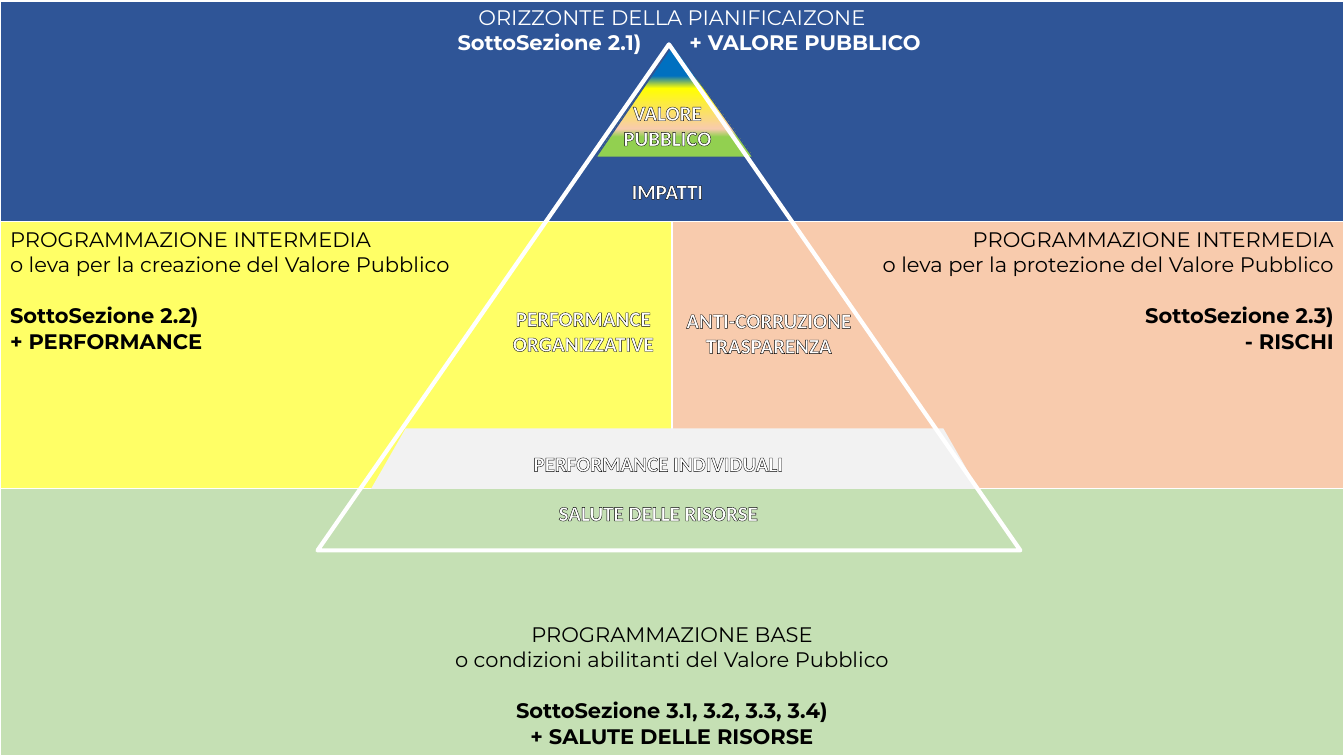
import pptx
import pptx.util
import pptx.dml.color
import pptx.enum.shapes
import pptx.enum.text
import pptx.oxml
import pptx.oxml.ns

Inches, Pt = pptx.util.Inches, pptx.util.Pt
RGB = pptx.dml.color.RGBColor.from_string
SHAPE = pptx.enum.shapes.MSO_SHAPE
ALIGN = pptx.enum.text.PP_ALIGN
NS = pptx.oxml.ns.nsdecls("a")

THEME = {
    "size": Pt(15), "table_font": "Montserrat", "label_font": "Calibri",
    "white": "FFFFFF", "black": "000000", "edge": "325491", "grey": "F2F2F2",
    "horizon": "2F5597", "performance": "FFFF66", "risks": "F8CBAD", "base": "C5E0B4",
    "tip": [(28, "0070C0"), (39, "FFFF00"), (75, "F8CBAD"), (82, "92D050")],
}
BLANK_LINE = Pt(18.3)


def add_run(p, text, font, color, bold):
    r = p.add_run()
    r.text = text
    for name, value in {"name": font, "size": THEME["size"], "bold": bold}.items():
        setattr(r.font, name, value)
    r.font.color.rgb = RGB(THEME[color])
    return r


def add_outline(kind, box, adjust, line=None, width=0):
    sp = s.shapes.add_shape(kind, *map(Inches, box))
    sp.shadow.inherit = False
    sp.adjustments[0] = adjust
    sp.fill.background()
    if line:
        sp.line.color.rgb = RGB(THEME[line])
        sp.line.width = Pt(width)
    else:
        sp.line.fill.background()
    return sp


prs = pptx.Presentation()
prs.slide_width, prs.slide_height = Inches(13.33), Inches(7.5)
s = prs.slides.add_slide(prs.slide_layouts[6])

# Background table: horizon, two levers, base
table = s.shapes.add_table(3, 2, 0, 0, prs.slide_width, prs.slide_height).table
table.first_row = table.horz_banding = False
for row, height in zip(table.rows, (2.2, 2.65, 2.65)):
    row.height = Inches(height)
for i in (0, 2):
    table.cell(i, 0).merge(table.cell(i, 1))

for i in range(3):
    for j in range(2):
        tcPr = table.cell(i, j)._tc.get_or_add_tcPr()
        for side in "LRTB":
            width = Pt(3 if (i, side) == (0, "T") else 1)
            tcPr.append(pptx.oxml.parse_xml(
                f'<a:ln{side} {NS} w="{width}"><a:solidFill>'
                f'<a:srgbClr val="{THEME["white"]}"/></a:solidFill></a:ln{side}>'))

# Each cell: row, column, fill, text colour, alignment, top margin, plain lines, bold lines
cells = [
    (0, 0, "horizon", "white", ALIGN.CENTER, 0.05,
     ["ORIZZONTE DELLA PIANIFICAIZONE"], []),
    (1, 0, "performance", "black", ALIGN.LEFT, 0.05,
     ["PROGRAMMAZIONE INTERMEDIA", "o leva per la creazione del Valore Pubblico"],
     ["SottoSezione 2.2)", "+ PERFORMANCE"]),
    (1, 1, "risks", "black", ALIGN.RIGHT, 0.05,
     ["PROGRAMMAZIONE INTERMEDIA", "o leva per la protezione del Valore Pubblico"],
     ["SottoSezione 2.3)", "- RISCHI"]),
    (2, 0, "base", "black", ALIGN.CENTER, 1.32,
     ["PROGRAMMAZIONE BASE", "o condizioni abilitanti del Valore Pubblico"],
     ["SottoSezione 3.1, 3.2, 3.3, 3.4)", "+ SALUTE DELLE RISORSE"]),
]
for i, j, fill, color, align, top, plain, bold in cells:
    cell = table.cell(i, j)
    cell.fill.solid()
    cell.fill.fore_color.rgb = RGB(THEME[fill])
    cell.margin_top = Inches(top)
    tf = cell.text_frame
    for n, text in enumerate(plain + bold):
        p = tf.add_paragraph() if n else tf.paragraphs[0]
        p.alignment = align
        if n == len(plain):
            p.space_before = BLANK_LINE
        add_run(p, text, THEME["table_font"], color, n >= len(plain))

# Heading split around the apex by one widely spaced blank
p = table.cell(0, 0).text_frame.add_paragraph()
p.alignment = ALIGN.CENTER
p._p.get_or_add_pPr().set("marL", str(Inches(0.34)))
for text, spacing in (("SottoSezione 2.1)", 0), (" ", 30), ("+ VALORE PUBBLICO", 0)):
    r = add_run(p, text, THEME["table_font"], "white", True)
    r._r.get_or_add_rPr().set("spc", str(spacing * 100))

# Pyramid: coloured tip, grey band, white outline
tip = add_outline(SHAPE.ISOSCELES_TRIANGLE, (5.91, 0.44, 1.56, 1.12), 0.49, "edge", 1)
tip.fill.gradient()
tip.fill.gradient_angle = 270
stops = tip._element.spPr.find(".//" + pptx.oxml.ns.qn("a:gsLst"))
for stop in list(stops):
    stops.remove(stop)
for position, color in THEME["tip"]:
    stops.append(pptx.oxml.parse_xml(
        f'<a:gs {NS} pos="{position * 1000}"><a:srgbClr val="{color}"/></a:gs>'))

band = add_outline(SHAPE.TRAPEZOID, (3.68, 4.25, 6.02, 0.6), 0.573)
band.fill.solid()
band.fill.fore_color.rgb = RGB(THEME["grey"])
add_outline(SHAPE.ISOSCELES_TRIANGLE, (3.15, 0.44, 6.97, 5.02), 0.5, "white", 3)

# Outlined labels inside the pyramid
labels = [
    (5.55, 1.7, 2.14, ["IMPATTI"]),
    (5.55, 0.92, 2.14, ["VALORE", "PUBBLICO"]),
    (4.29, 2.96, 2.99, ["PERFORMANCE", "ORGANIZZATIVE"]),
    (6.07, 2.98, 3.11, ["ANTI-CORRUZIONE", "TRASPARENZA"]),
    (3.81, 4.4, 5.44, ["PERFORMANCE INDIVIDUALI"]),
    (3.81, 4.89, 5.44, ["SALUTE DELLE RISORSE"]),
]
frame_format = {
    "word_wrap": True, "auto_size": pptx.enum.text.MSO_AUTO_SIZE.SHAPE_TO_FIT_TEXT,
    "margin_left": Inches(0.13), "margin_right": Inches(0.13),
    "margin_top": Inches(0.07), "margin_bottom": Inches(0.07),
}
for left, top, width, lines in labels:
    height = 0.14 + 0.25 * len(lines)
    tf = s.shapes.add_textbox(*map(Inches, (left, top, width, height))).text_frame
    for name, value in frame_format.items():
        setattr(tf, name, value)
    for n, text in enumerate(lines):
        p = tf.add_paragraph() if n else tf.paragraphs[0]
        p.alignment = ALIGN.CENTER
        r = add_run(p, text, THEME["label_font"], "white", True)
        r._r.get_or_add_rPr().insert(0, pptx.oxml.parse_xml(
            f'<a:ln {NS} w="{Pt(1)}"><a:solidFill>'
            f'<a:srgbClr val="{THEME["black"]}"/></a:solidFill></a:ln>'))

prs.save("out.pptx")
